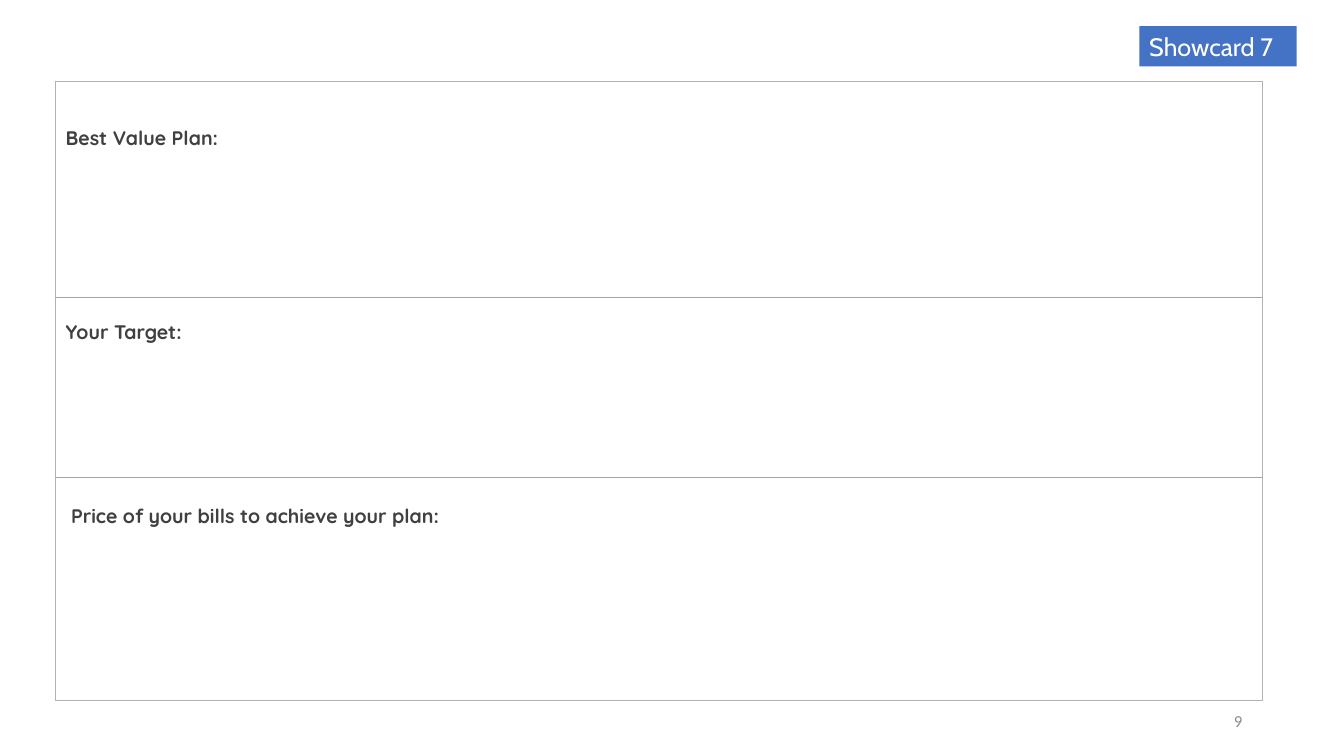
import pptx
import pptx.dml.color
import pptx.enum.shapes
import pptx.enum.text
import pptx.oxml
import pptx.oxml.ns
import pptx.util
from pptx.util import Inches

COLORS = {
    "badge": "4472C4",
    "white": "FFFFFF",
    "text": "404040",
    "number": "8C8C8C",
    "divider": "A5A5A5",
    "border": "B2B2B2",
}
# Section heading and the space above it in points
SECTIONS = [
    ("Best Value Plan:", 0),
    ("Your Target:", 112),
    ("\N{NO-BREAK SPACE}Price of your bills to achieve your plan:", 105),
]
TABLE_LEFT, TABLE_TOP, TABLE_WIDTH, TABLE_HEIGHT = 0.55, 0.81, 11.97, 6.14


def rgb(name):
    return pptx.dml.color.RGBColor.from_string(COLORS[name])


def style_font(paragraph, name, size, color):
    paragraph.font.name = name
    paragraph.font.size = pptx.util.Pt(size)
    paragraph.font.color.rgb = rgb(color)


presentation = pptx.Presentation()
presentation.slide_width = Inches(13.33)
presentation.slide_height = Inches(7.5)
slide = presentation.slides.add_slide(presentation.slide_layouts[6])

# Slide number
number_box = slide.shapes.add_textbox(Inches(9.42), Inches(6.95), Inches(3), Inches(0.4))
number_box.text_frame.word_wrap = True
number_box.text_frame.vertical_anchor = pptx.enum.text.MSO_ANCHOR.MIDDLE
paragraph = number_box.text_frame.paragraphs[0]
paragraph.text = "9"
paragraph.alignment = pptx.enum.text.PP_ALIGN.RIGHT
style_font(paragraph, "Calibri", 12, "number")

# Answer sheet: one cell holding the three headings
table = slide.shapes.add_table(
    1, 1, Inches(TABLE_LEFT), Inches(TABLE_TOP), Inches(TABLE_WIDTH), Inches(TABLE_HEIGHT)
).table
table.first_row = False
table.horz_banding = False
cell = table.cell(0, 0)
cell.margin_top = Inches(0.42)
cell_properties = cell._tc.get_or_add_tcPr()
for side in ("lnL", "lnR", "lnT", "lnB"):
    cell_properties.append(pptx.oxml.parse_xml(
        f'<a:{side} {pptx.oxml.ns.nsdecls("a")} w="12700"><a:solidFill>'
        f'<a:srgbClr val="{COLORS["border"]}"/></a:solidFill></a:{side}>'
    ))
cell.fill.background()

for index, (heading, space_above) in enumerate(SECTIONS):
    paragraph = cell.text_frame.add_paragraph() if index else cell.text_frame.paragraphs[0]
    paragraph.text = heading
    paragraph.line_spacing = 1.07
    paragraph.space_before = pptx.util.Pt(space_above)
    paragraph.space_after = pptx.util.Pt(8)
    style_font(paragraph, "Quicksand", 14, "text")
    paragraph.font.bold = True

# Showcard badge
badge = slide.shapes.add_shape(
    pptx.enum.shapes.MSO_SHAPE.RECTANGLE, Inches(11.3), Inches(0.26), Inches(1.56), Inches(0.4)
)
badge.shadow.inherit = False
badge.fill.solid()
badge.fill.fore_color.rgb = rgb("badge")
badge.line.fill.background()
badge.text_frame.word_wrap = True
paragraph = badge.text_frame.paragraphs[0]
paragraph.text = "Showcard 7"
paragraph.alignment = pptx.enum.text.PP_ALIGN.LEFT
style_font(paragraph, "Cabin", 18, "white")

# Dividers between the sections
for top in (2.95, 4.74):
    divider = slide.shapes.add_connector(
        pptx.enum.shapes.MSO_CONNECTOR.STRAIGHT,
        Inches(TABLE_LEFT), Inches(top), Inches(TABLE_LEFT + TABLE_WIDTH), Inches(top),
    )
    divider.line.color.rgb = rgb("divider")
    divider.line.width = pptx.util.Pt(0.5)
    divider._element.spPr.append(
        pptx.oxml.parse_xml(f'<a:effectLst {pptx.oxml.ns.nsdecls("a")}/>')
    )

presentation.save("out.pptx")
